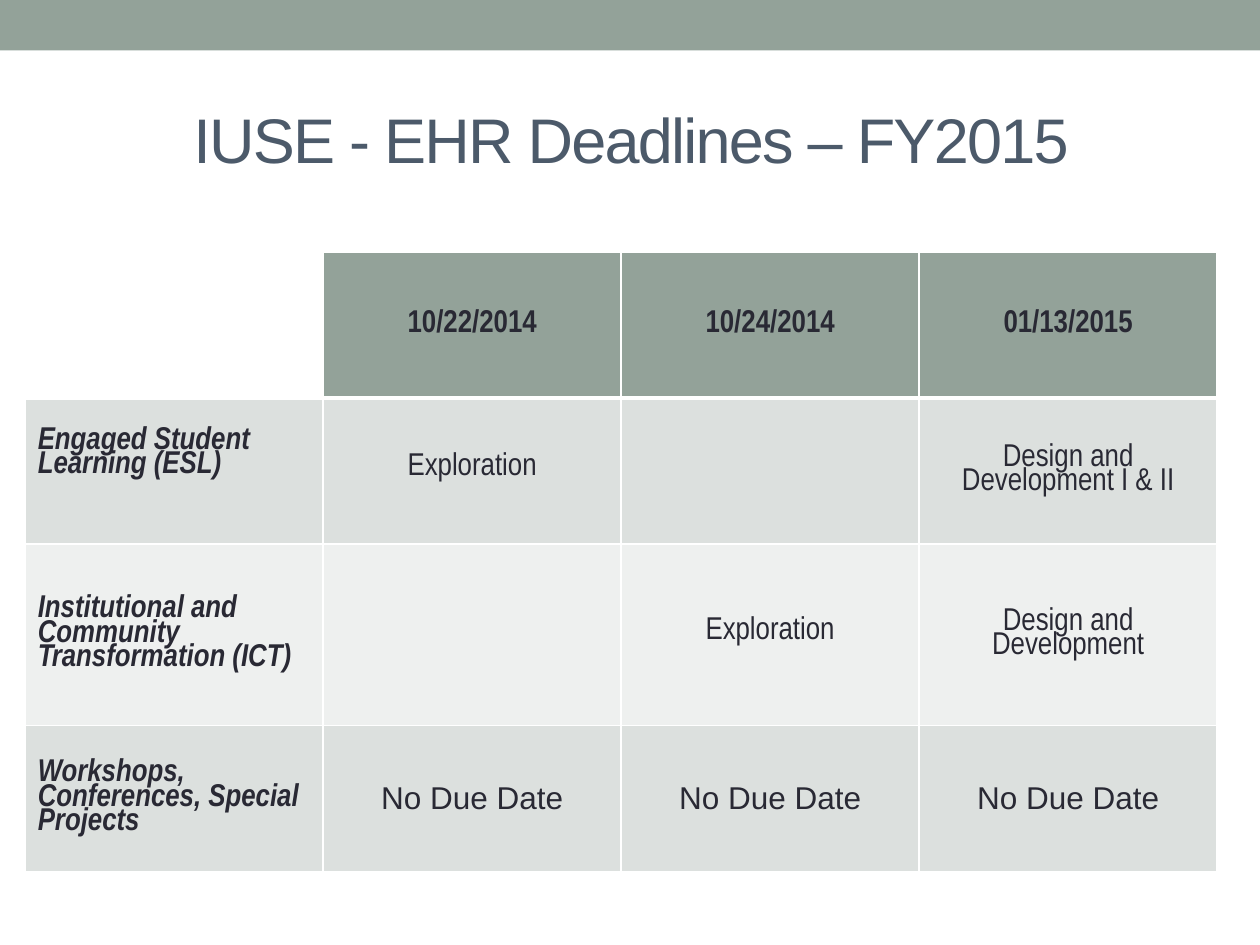
"""Build the IUSE - EHR deadlines slide with a banner, a title and a table."""
from dataclasses import dataclass
from typing import Any

from lxml.etree import SubElement
from pptx import Presentation
from pptx.dml.color import RGBColor
from pptx.enum.shapes import MSO_SHAPE as Shape
from pptx.enum.text import MSO_ANCHOR as Anchor, PP_ALIGN as Align
from pptx.oxml.ns import qn
from pptx.util import Pt

GREEN, WHITE, INK, SLATE = "93A299", "FFFFFF", "292934", "4C5A6A"
DARK_BAND, LIGHT_BAND = "DCE0DE", "EEF0EF"
NARROW = {"name": "Arial Narrow", "size": Pt(18), "bold": False, "italic": False}
HEADER = NARROW | {"bold": True}
LABEL = HEADER | {"italic": True}
REGULAR = NARROW | {"name": "Arial"}
TITLE = {"name": "Arial", "size": Pt(36), "bold": False}
TIGHT = {"alignment": Align.CENTER, "line_spacing": 0.82}
TIGHT_LEFT = TIGHT | {"alignment": Align.LEFT}
SINGLE = TIGHT | {"line_spacing": 1.0}
COLUMN_WIDTH = 170.3


@dataclass(frozen=True)
class Entry:
    text: str = ""
    font: Any = None
    layout: Any = None
    bottom: float = 3.6


@dataclass(frozen=True)
class Row:
    height: float
    fill: str
    entries: tuple[Entry, ...]


def centred(text: str, bottom: float = 3.6) -> Entry:
    return Entry(text, NARROW, TIGHT, bottom)


def label(text: str, bottom: float = 3.6) -> Entry:
    return Entry(text, LABEL, TIGHT_LEFT, bottom)


DATES = ("10/22/2014", "10/24/2014", "01/13/2015")
ROWS = (
    Row(83.5, GREEN, (Entry(), *(Entry(date, HEADER, TIGHT) for date in DATES))),
    Row(83.5, DARK_BAND, (
        label("Engaged Student Learning (ESL)", 23),
        centred("Exploration", 7),
        Entry(),
        centred("Design and Development I & II"),
    )),
    Row(103.7, LIGHT_BAND, (
        label("Institutional and Community Transformation (ICT)"),
        Entry(),
        centred("Exploration", 7),
        centred("Design and Development"),
    )),
    Row(83.5, DARK_BAND, (
        label("Workshops, Conferences, Special Projects"),
        *(Entry("No Due Date", REGULAR, SINGLE),) * 3,
    )),
)


def colour(value: str) -> RGBColor:
    return RGBColor.from_string(value)


def apply(target: Any, values: dict[str, Any]) -> None:
    for name, value in values.items():
        setattr(target, name, value)


def write(paragraph: Any, text: str, font: dict, layout: dict, ink: str) -> Any:
    apply(paragraph, layout)
    run = paragraph.add_run()
    run.text = text
    apply(run.font, font)
    run.font.color.rgb = colour(ink)
    return run


def add_banner(slide: Any) -> None:
    shape = slide.shapes.add_shape(Shape.RECTANGLE, 0, 0, Pt(720), Pt(28.8))
    shape.shadow.inherit = False
    shape.fill.solid()
    shape.fill.fore_color.rgb = colour(GREEN)
    shape.line.fill.background()


def add_title(slide: Any) -> None:
    shape = slide.shapes.add_textbox(Pt(36.7), Pt(66.2), Pt(648), Pt(66.2))
    frame = shape.text_frame
    apply(frame, {"word_wrap": True, "vertical_anchor": Anchor.MIDDLE,
                  "margin_bottom": Pt(44)})
    run = write(frame.paragraphs[0], "IUSE - EHR Deadlines – FY2015", TITLE,
                {"alignment": Align.CENTER}, SLATE)
    run.font._element.set("spc", "-100")


def add_borders(cell: Any, row_index: int) -> None:
    properties = cell._tc.get_or_add_tcPr()
    widths = {"lnL": 1, "lnR": 1, "lnT": 3 if row_index == 1 else 1,
              "lnB": 3 if row_index == 0 else 1}
    for side, width in widths.items():
        line = SubElement(properties, qn(f"a:{side}"), w=str(Pt(width)))
        fill = SubElement(line, qn("a:solidFill"))
        SubElement(fill, qn("a:srgbClr"), val=WHITE)


def fill_cell(cell: Any, entry: Entry, fill: str, row_index: int) -> None:
    add_borders(cell, row_index)
    cell.fill.solid()
    cell.fill.fore_color.rgb = colour(fill)
    apply(cell, {"vertical_anchor": Anchor.MIDDLE, "margin_bottom": Pt(entry.bottom)})
    if entry.text:
        write(cell.text_frame.paragraphs[0], entry.text, entry.font, entry.layout, INK)


def add_deadlines(slide: Any) -> None:
    columns = len(DATES) + 1
    height = sum(row.height for row in ROWS)
    table = slide.shapes.add_table(len(ROWS), columns, Pt(14.4), Pt(144),
                                   Pt(COLUMN_WIDTH * columns), Pt(height)).table
    apply(table, {"first_row": False, "horz_banding": False})
    for column in table.columns:
        column.width = Pt(COLUMN_WIDTH)
    for row_index, row in enumerate(ROWS):
        table.rows[row_index].height = Pt(row.height)
        for column_index, entry in enumerate(row.entries):
            corner = row_index == column_index == 0
            fill_cell(table.cell(row_index, column_index), entry,
                      WHITE if corner else row.fill, row_index)


def main() -> None:
    presentation = Presentation()
    apply(presentation, {"slide_width": Pt(720), "slide_height": Pt(540)})
    slide = presentation.slides.add_slide(presentation.slide_layouts[6])
    add_banner(slide)
    add_title(slide)
    add_deadlines(slide)
    presentation.save("out.pptx")


if __name__ == "__main__":
    main()
